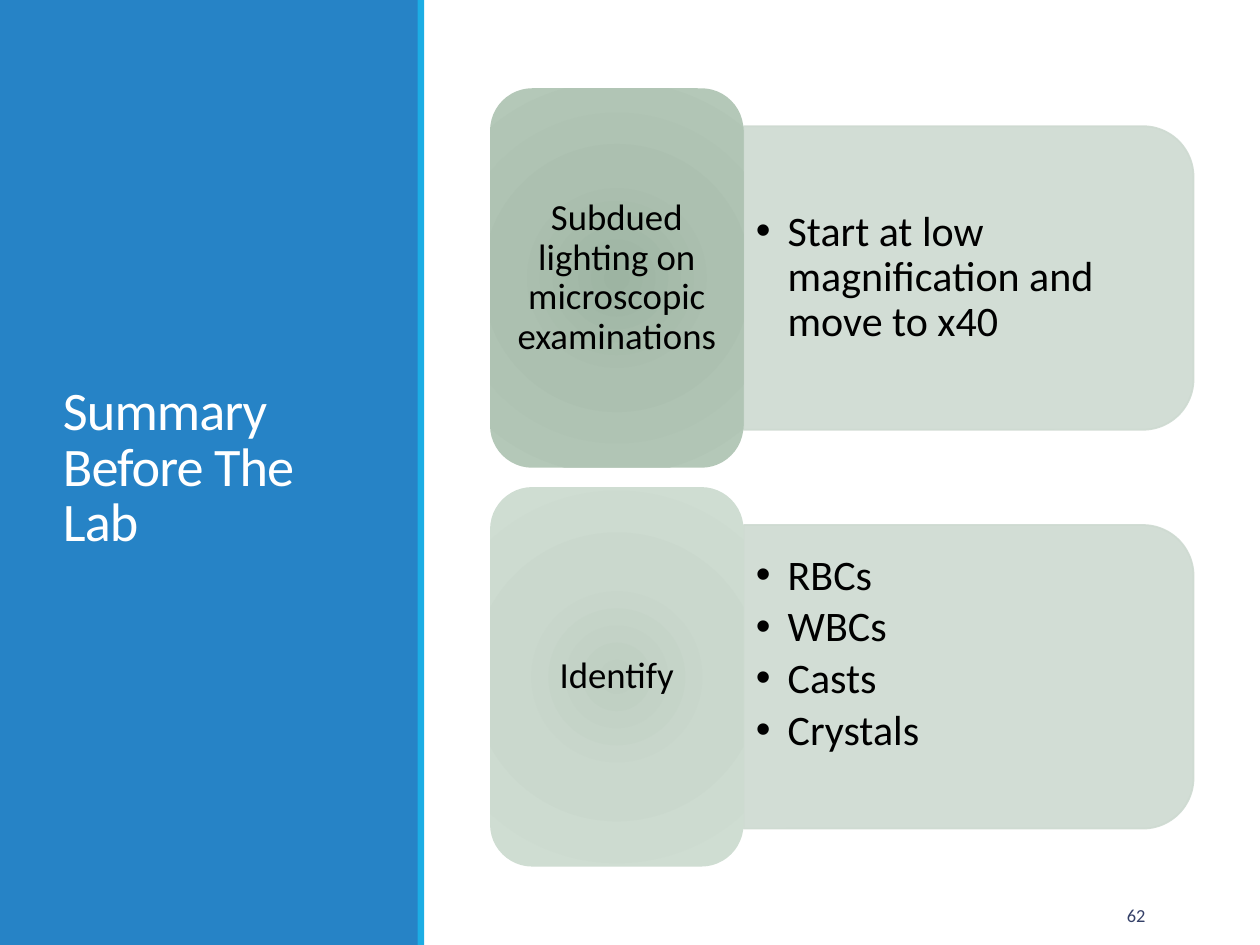
import pptx
import pptx.util
import pptx.dml.color
import pptx.enum.shapes
import pptx.enum.text
import pptx.oxml
import pptx.oxml.ns

Cm, Pt = pptx.util.Cm, pptx.util.Pt
SHAPES = pptx.enum.shapes.MSO_SHAPE
ALIGN = pptx.enum.text.PP_ALIGN
NS = pptx.oxml.ns.nsdecls("a")
qn = pptx.oxml.ns.qn

COLORS = {
    "blue": "2683C6",
    "cyan": "1CADE4",
    "panel": "CEDAD1",
    "white": "FFFFFF",
    "black": "000000",
    "navy": "344068",
}
ROWS = [
    ("Subdued lighting on microscopic examinations",
     ["Start at low magnification and move to x40"],
     ("9DB4A2", "ACC0B0", "B4C8B8"), 0.13),
    ("Identify",
     ["RBCs", "WBCs", "Casts", "Crystals"],
     ("BECEC1", "CAD8CD", "CFDDD2"), 1.05),
]
LABEL_LEFT, LABEL_TOP, LABEL_W, LABEL_H = 9.88, 1.78, 5.11, 7.65
ROW_PITCH = 8.04
PANEL_W, PANEL_H = 9.07, 6.12
LIST_W, LIST_H = 8.76, 5.54


def rgb(name):
    return pptx.dml.color.RGBColor.from_string(COLORS[name])


def add_shape(slide, kind, x, y, w, h, fill=None):
    sp = slide.shapes.add_shape(kind, Cm(x), Cm(y), Cm(w), Cm(h))
    sp.shadow.inherit = False
    sp.line.fill.background()
    if fill:
        sp.fill.solid()
        sp.fill.fore_color.rgb = rgb(fill)
    return sp


def set_alpha(fill, percent):
    color = fill._xPr.find(qn("a:solidFill"))[0]
    color.append(pptx.oxml.parse_xml(f'<a:alpha {NS} val="{percent * 1000}"/>'))


def set_radial_fill(sp, stops):
    gs = "".join(f'<a:gs pos="{pos * 1000}"><a:srgbClr val="{c}"/></a:gs>'
                 for pos, c in zip((0, 45, 100), stops))
    sp.fill.background()
    spPr = sp._element.spPr
    spPr.replace(spPr.find(qn("a:noFill")), pptx.oxml.parse_xml(
        f'<a:gradFill {NS} rotWithShape="1"><a:gsLst>{gs}</a:gsLst><a:path path="circle">'
        '<a:fillToRect l="100000" t="100000" r="100000" b="100000"/></a:path></a:gradFill>'))


def add_bullet(p):
    pPr = p._p.get_or_add_pPr()
    pPr.set("marL", str(Cm(0.64)))
    pPr.set("indent", str(-Cm(0.64)))
    pPr.append(pptx.oxml.parse_xml(f'<a:buFont {NS} typeface="Arial"/>'))
    pPr.append(pptx.oxml.parse_xml(f'<a:buChar {NS} char="•"/>'))


def write(sp, lines, size, color="black", align=ALIGN.LEFT, spacing=1.0, after=0,
          bullet=False, tracking=None, inset=(0.25, 0.13, 0.25, 0.13)):
    tf = sp.text_frame
    tf.word_wrap = True
    tf.vertical_anchor = pptx.enum.text.MSO_ANCHOR.MIDDLE
    tf.margin_left, tf.margin_top, tf.margin_right, tf.margin_bottom = map(Cm, inset)
    for i, line in enumerate(lines):
        p = tf.paragraphs[0] if i == 0 else tf.add_paragraph()
        if bullet:
            add_bullet(p)
        p.alignment = align
        p.line_spacing = spacing
        p.space_after = Pt(after)
        r = p.add_run()
        r.text = line
        r.font.name = "Calibri"
        r.font.size = Pt(size)
        r.font.color.rgb = rgb(color)
        if tracking:
            r._r.get_or_add_rPr().set("spc", str(tracking))


def add_text(slide, x, y, w, h, lines, size, **fmt):
    sp = slide.shapes.add_textbox(Cm(x), Cm(y), Cm(w), Cm(h))
    write(sp, lines, size, **fmt)


def add_panel(slide, x, middle):
    sp = add_shape(slide, SHAPES.ROUND_2_SAME_RECTANGLE, x + (PANEL_W - PANEL_H) / 2,
                   middle - PANEL_W / 2, PANEL_H, PANEL_W, "panel")
    sp.rotation = 90
    sp.line.color.rgb = rgb("panel")
    sp.line.width = Pt(1)
    set_alpha(sp.fill, 90)
    set_alpha(sp.line.fill, 90)


def add_row(slide, top, label, items, stops, bottom_inset):
    middle = top + LABEL_H / 2
    right = LABEL_LEFT + LABEL_W
    add_panel(slide, right, middle)
    add_text(slide, right, middle - LIST_H / 2, LIST_W, LIST_H, items, 24, spacing=0.9,
             after=3.6, bullet=True, inset=(0.25, 0.13, 0.25, bottom_inset))
    sp = add_shape(slide, SHAPES.ROUNDED_RECTANGLE, LABEL_LEFT, top, LABEL_W, LABEL_H)
    set_radial_fill(sp, stops)
    write(sp, [label], 21, align=ALIGN.CENTER, spacing=0.9, inset=(0.23, 0.1, 0.23, 0.1))


def main():
    prs = pptx.Presentation()
    prs.slide_width, prs.slide_height = Cm(25.4), Cm(19.05)
    slide = prs.slides.add_slide(prs.slide_layouts[6])
    add_shape(slide, SHAPES.RECTANGLE, 0, 0, 8.43, 19.05, "blue")
    add_shape(slide, SHAPES.RECTANGLE, 8.42, 0, 0.13, 19.05, "cyan")
    add_text(slide, 1.02, 1.45, 6.43, 16.03, ["Summary Before The Lab"], 31,
             color="white", spacing=0.85, tracking=-50)
    for i, row in enumerate(ROWS):
        add_row(slide, LABEL_TOP + i * ROW_PITCH, *row)
    add_text(slide, 21.08, 17.93, 2.26, 1.02, ["62"], 10.5, color="navy", align=ALIGN.RIGHT)
    prs.save("out.pptx")


if __name__ == "__main__":
    main()
